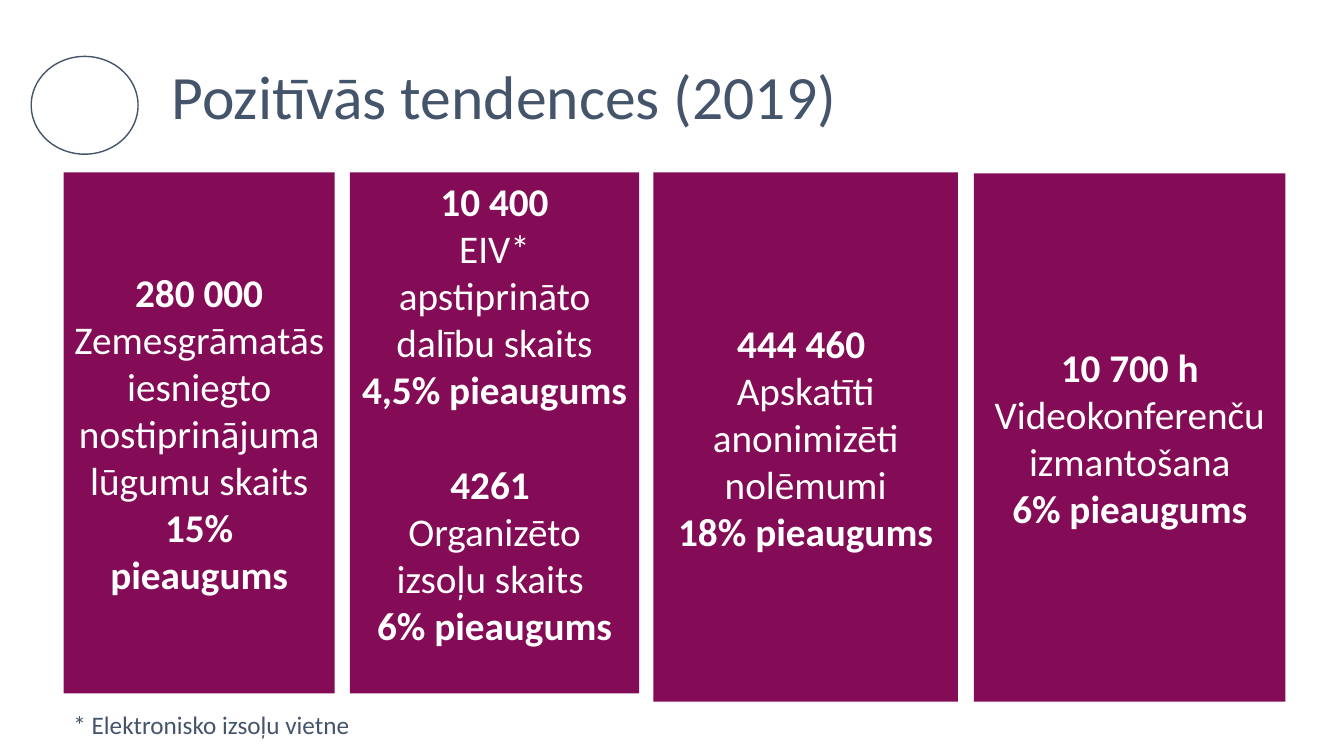
"""Build the slide on positive tendencies in 2019."""
from pptx import Presentation
from pptx.dml.color import RGBColor
from pptx.enum import shapes, text
from pptx.util import Inches, Pt

NAVY, PLUM, WHITE = "44546A", "840B55", "FFFFFF"
MIDDLE, TOP = text.MSO_ANCHOR.MIDDLE, text.MSO_ANCHOR.TOP
LEFT, CENTER = text.PP_ALIGN.LEFT, text.PP_ALIGN.CENTER


def rgb(value):
    return RGBColor.from_string(value)


def write(tf, words, size=28, color=WHITE, bold=False, align=CENTER, before=0, spacing=None):
    p = tf.paragraphs[0] if not tf.text else tf.add_paragraph()
    p.alignment = align
    p.space_before = Pt(before)
    p.line_spacing = spacing
    r = p.add_run()
    r.text = words
    r.font.name = "Calibri"
    r.font.size = Pt(size)
    r.font.bold = bold
    r.font.color.rgb = rgb(color)


prs = Presentation()
prs.slide_width, prs.slide_height = Inches(13.33), Inches(7.5)
s = prs.slides.add_slide(prs.slide_layouts[5])

title = s.shapes.title
title.left, title.top = Inches(1.6), Inches(0.26)
title.width, title.height = Inches(10.82), Inches(1.45)
title.text_frame.vertical_anchor = MIDDLE
write(title.text_frame, "Pozitīvās tendences (2019)", size=44, color=NAVY, align=LEFT, spacing=0.9)

ring = s.shapes.add_shape(shapes.MSO_SHAPE.OVAL, Inches(0.31), Inches(0.56), Inches(1.06), Inches(0.97))
ring.shadow.inherit = False
ring.fill.background()
ring.line.color.rgb = rgb(NAVY)
ring.line.width = Pt(1)

panels = [
    (0.63, 1.71, 2.69, 5.17, MIDDLE, [
        ("280 000", True, 0),
        ("Zemesgrāmatās iesniegto", False, 0),
        ("nostiprinājuma lūgumu skaits", False, 0),
        ("15% pieaugums", True, 0)]),
    (3.47, 1.71, 2.87, 5.17, TOP, [
        ("10 400", True, 0),
        ("EIV* apstiprināto dalību skaits", False, 0),
        ("4,5% pieaugums", True, 0),
        ("4261 ", True, 34),
        ("Organizēto izsoļu skaits ", False, 0),
        ("6% pieaugums", True, 0)]),
    (6.48, 1.71, 3.02, 5.25, MIDDLE, [
        ("444 460 ", True, 0),
        ("Apskatīti anonimizēti nolēmumi", False, 0),
        ("18% pieaugums", True, 0)]),
    (9.66, 1.72, 3.09, 5.24, MIDDLE, [
        ("10 700 h", True, 0),
        ("Videokonferenču izmantošana", False, 0),
        ("6% pieaugums", True, 0)]),
]
for left, top, width, height, anchor, lines in panels:
    sp = s.shapes.add_shape(shapes.MSO_SHAPE.RECTANGLE, Inches(left), Inches(top), Inches(width), Inches(height))
    sp.shadow.inherit = False
    sp.fill.solid()
    sp.fill.fore_color.rgb = rgb(PLUM)
    sp.line.fill.background()
    tf = sp.text_frame
    tf.word_wrap = True
    tf.vertical_anchor = anchor
    for words, bold, before in lines:
        write(tf, words, bold=bold, before=before)

note = s.shapes.add_textbox(Inches(0.63), Inches(6.99), Inches(7.59), Inches(0.4))
note.text_frame.word_wrap = True
note.text_frame.auto_size = text.MSO_AUTO_SIZE.SHAPE_TO_FIT_TEXT
write(note.text_frame, "* Elektronisko izsoļu vietne", size=18, color=NAVY, align=LEFT)

prs.save("out.pptx")
